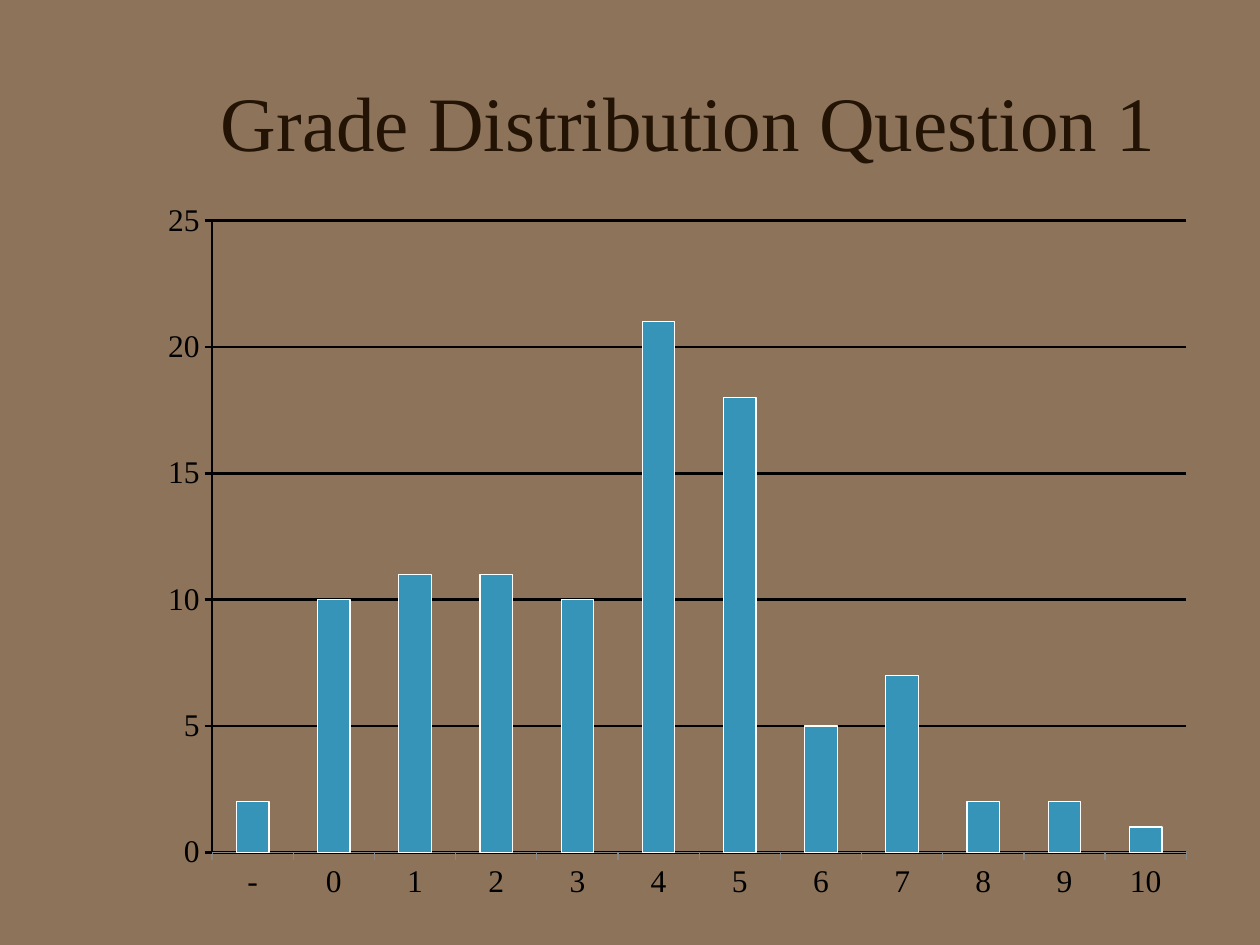
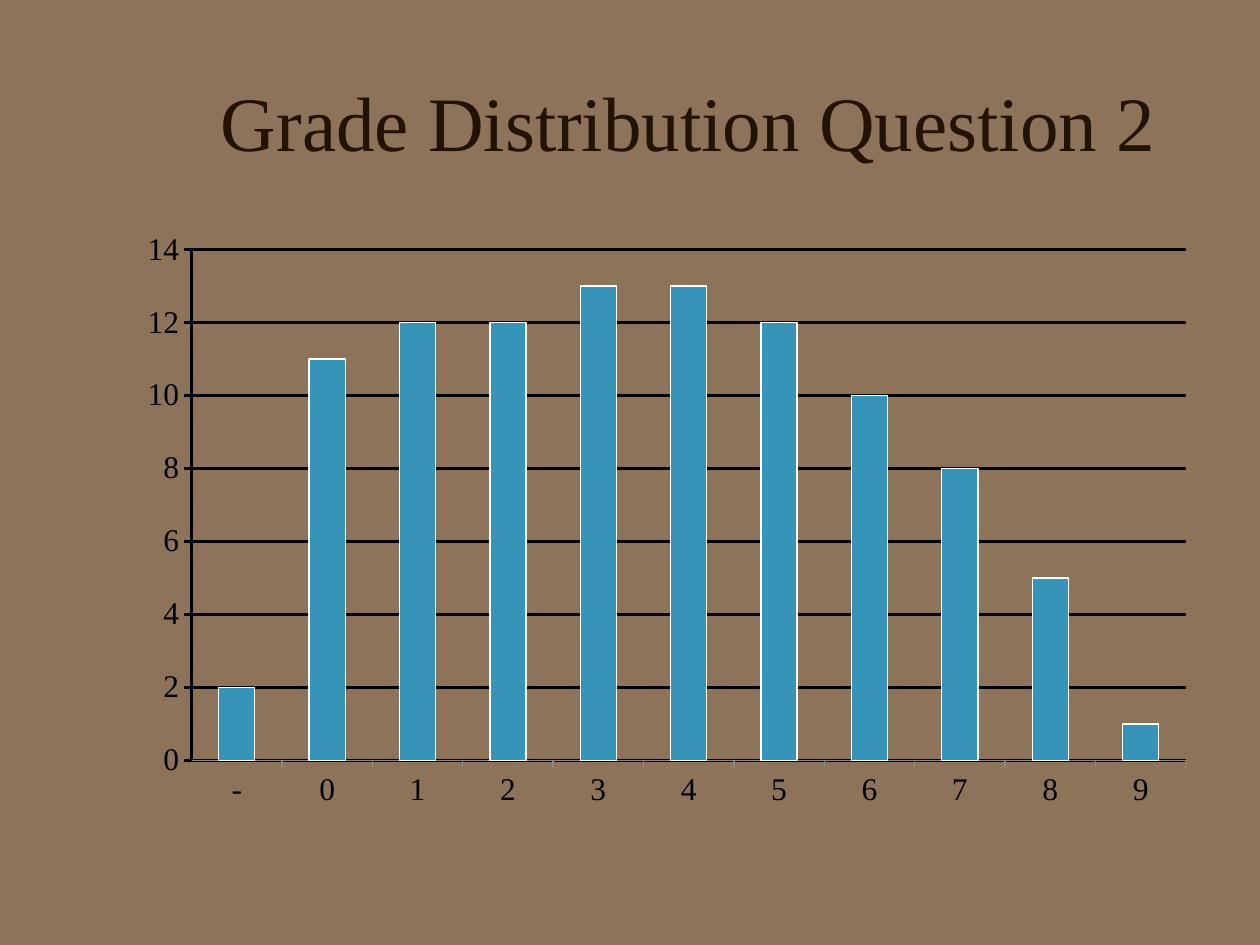
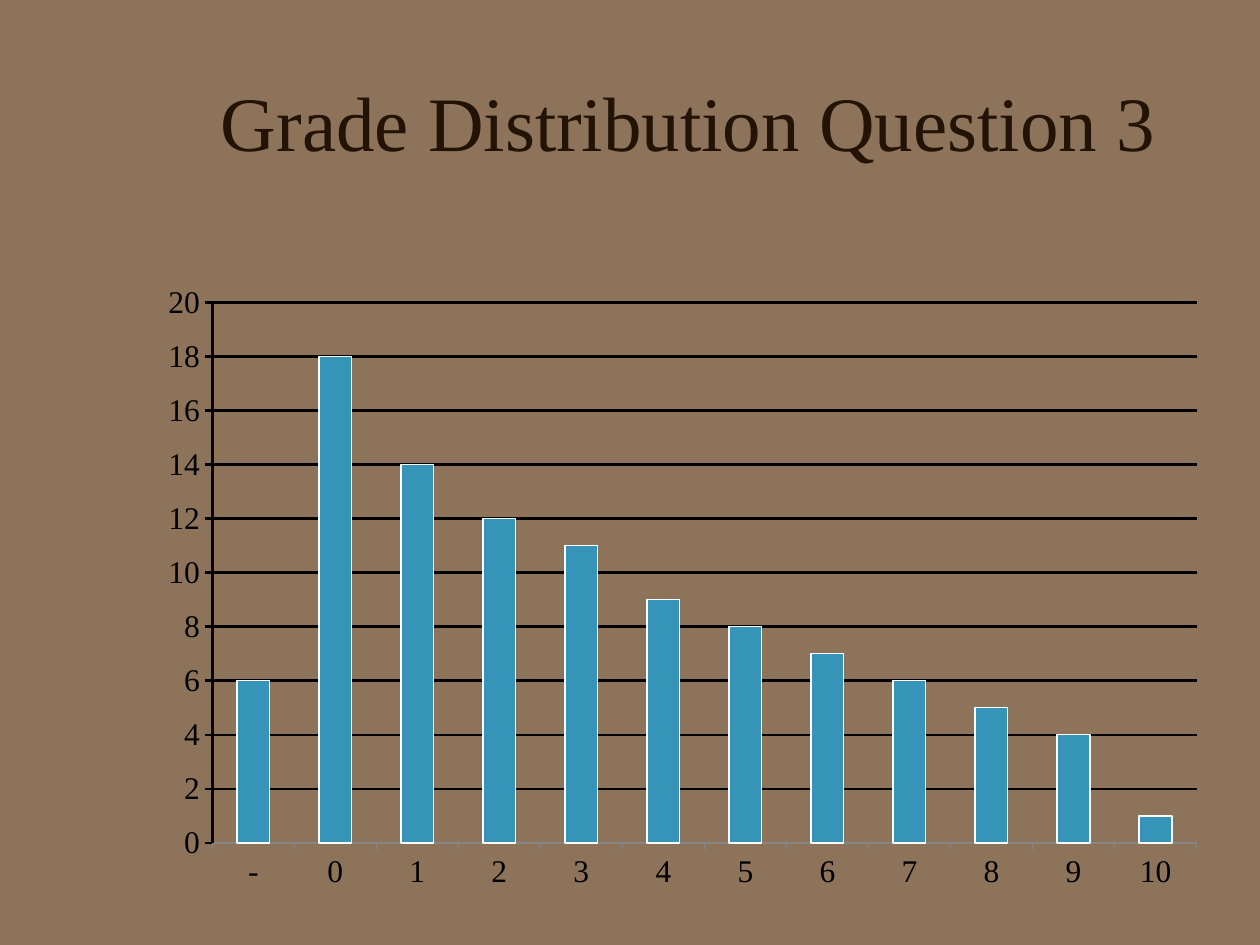
"""Build the grade distribution slides, one column chart per question."""
from dataclasses import dataclass

from pptx import Presentation
from pptx.chart.data import CategoryChartData
from pptx.dml.color import RGBColor
from pptx.enum.chart import XL_CHART_TYPE, XL_TICK_MARK
from pptx.enum.text import MSO_ANCHOR, PP_ALIGN
from pptx.util import Pt

COLUMN = XL_CHART_TYPE.COLUMN_CLUSTERED
TICK_OUT, TICK_NONE = XL_TICK_MARK.OUTSIDE, XL_TICK_MARK.NONE
MIDDLE, CENTER = MSO_ANCHOR.MIDDLE, PP_ALIGN.CENTER


@dataclass(frozen=True)
class Theme:
    """Colours, type sizes and line widths of the deck."""
    font: str = "Times New Roman"
    background: str = "8C735A"
    title: str = "221304"
    text: str = "000000"
    bar: str = "3694B8"
    bar_edge: str = "FFFFFF"
    base_line: str = "868686"
    title_size: float = 44
    chart_size: float = 18
    grid_width: float = 1.5
    thin_width: float = 0.75


def apply(obj, values):
    """Set each attribute of obj from a dict of format values."""
    for name, value in values.items():
        setattr(obj, name, value)


class Deck:
    """Holds the theme and the current slide."""

    def __init__(self, theme):
        """Start an empty 10 by 7.5 inch presentation."""
        self.theme = theme
        self.prs = Presentation()
        apply(self.prs, {"slide_width": Pt(720), "slide_height": Pt(540)})

    def slide(self):
        """Add a blank slide with the deck background."""
        self.s = self.prs.slides.add_slide(self.prs.slide_layouts[6])
        fill = self.s.background.fill
        fill.solid()
        fill.fore_color.rgb = RGBColor.from_string(self.theme.background)

    def font(self, font, size, color):
        """Apply the deck typeface with a size and colour."""
        apply(font, {"name": self.theme.font, "size": Pt(size), "bold": False})
        font.color.rgb = RGBColor.from_string(color)

    def line(self, fmt, color, width):
        """Style a chart line."""
        fmt.line.color.rgb = RGBColor.from_string(color)
        fmt.line.width = Pt(width)

    def title(self, text):
        """Add the centred slide title."""
        tf = self.s.shapes.add_textbox(Pt(84), Pt(24), Pt(608), Pt(90)).text_frame
        apply(tf, {"word_wrap": True, "vertical_anchor": MIDDLE})
        p = tf.paragraphs[0]
        p.alignment = CENTER
        r = p.add_run()
        r.text = text
        self.font(r.font, self.theme.title_size, self.theme.title)

    def columns(self, box, grades, counts, top, step):
        """Add a column chart of the number of students per grade."""
        t = self.theme
        data = CategoryChartData(number_format="General")
        data.categories = grades
        data.add_series("Series 1", counts)
        chart = self.s.shapes.add_chart(COLUMN, *map(Pt, box), data).chart
        apply(chart, {"has_legend": False, "has_title": False})
        self.font(chart.font, t.chart_size, t.text)

        plot = chart.plots[0]
        apply(plot, {"gap_width": 150, "vary_by_categories": False})
        fmt = plot.series[0].format
        fmt.fill.solid()
        fmt.fill.fore_color.rgb = RGBColor.from_string(t.bar)
        self.line(fmt, t.bar_edge, t.thin_width)

        ticks = {"major_tick_mark": TICK_OUT, "minor_tick_mark": TICK_NONE}
        apply(chart.category_axis, {**ticks, "has_major_gridlines": False})
        self.line(chart.category_axis.format, t.base_line, t.thin_width)
        axis = chart.value_axis
        apply(axis, {**ticks, "has_major_gridlines": True, "minimum_scale": 0,
                     "maximum_scale": top, "major_unit": step})
        for part in (axis, axis.major_gridlines):
            self.line(part.format, t.text, t.grid_width)


QUESTIONS = [
    ((84, 108, 606, 414), (2, 10, 11, 11, 10, 21, 18, 5, 7, 2, 2, 1), 25, 5),
    ((72, 126, 618, 342), (2, 11, 12, 12, 13, 13, 12, 10, 8, 5, 1), 14, 2),
    ((84, 156, 612, 359.5), (6, 18, 14, 12, 11, 9, 8, 7, 6, 5, 4, 1), 20, 2),
]


def main():
    """Build and save the deck."""
    deck = Deck(Theme())
    for number, (box, counts, top, step) in enumerate(QUESTIONS, 1):
        grades = ["-", *map(str, range(len(counts) - 1))]
        deck.slide()
        deck.title(f" Grade Distribution Question {number}")
        deck.columns(box, grades, counts, top, step)
    deck.prs.save("out.pptx")


if __name__ == "__main__":
    main()
